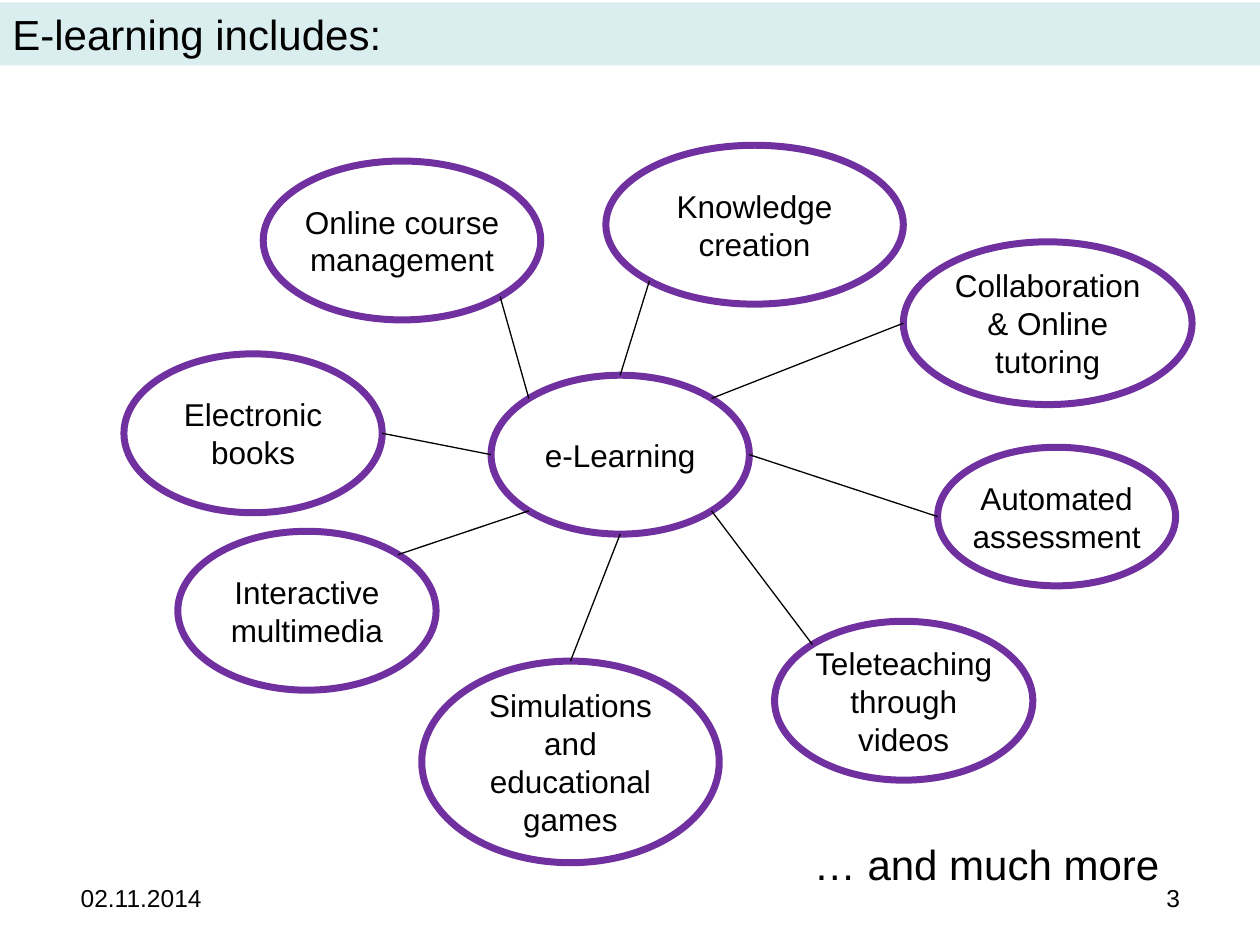
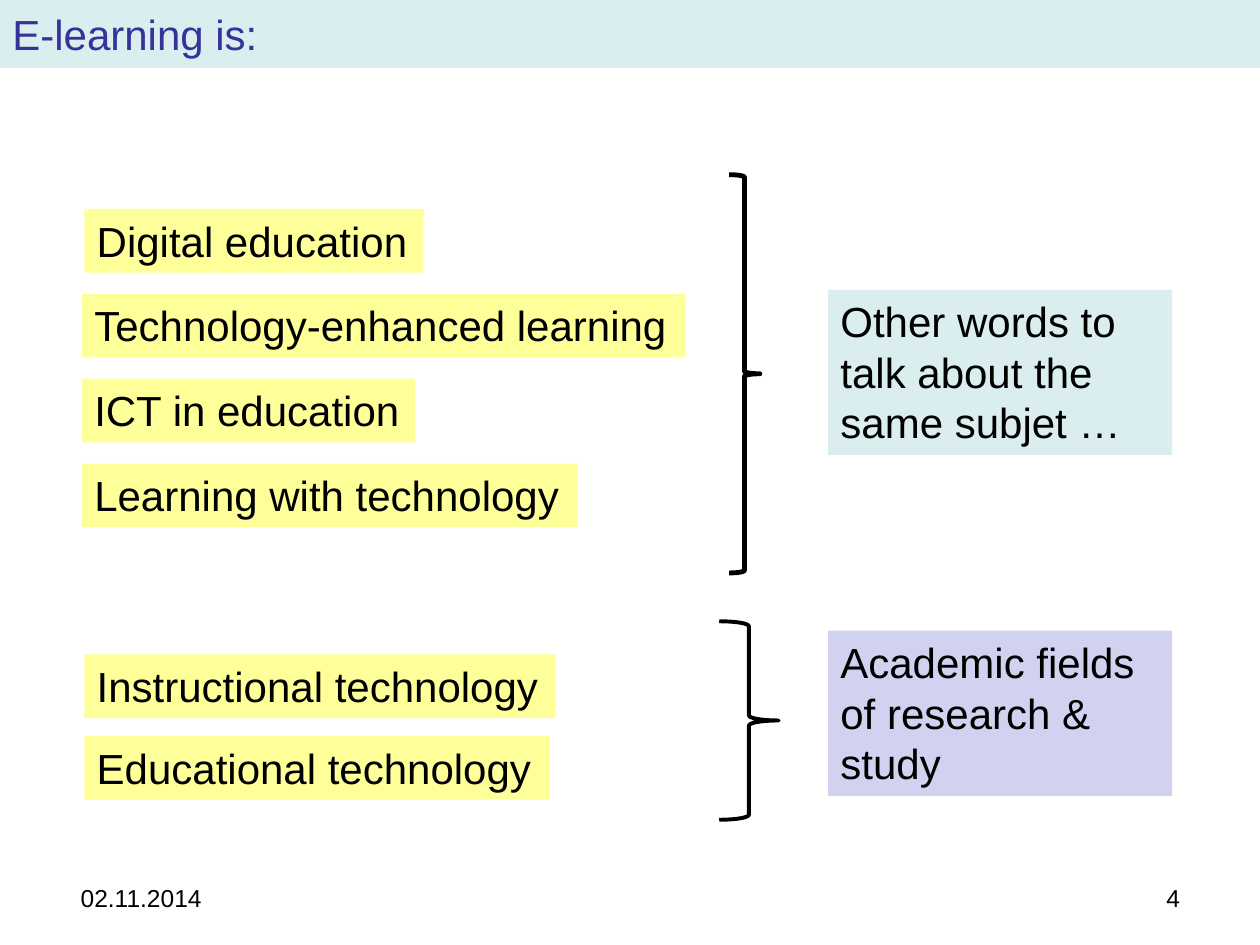
from lxml import etree
from pptx import Presentation
from pptx.dml.color import RGBColor
from pptx.enum.shapes import MSO_CONNECTOR, MSO_SHAPE
from pptx.enum.text import MSO_ANCHOR, PP_ALIGN
from pptx.oxml.ns import qn
from pptx.util import Pt

RECT, OVAL, BRACE = MSO_SHAPE.RECTANGLE, MSO_SHAPE.OVAL, MSO_SHAPE.RIGHT_BRACE
STRAIGHT = MSO_CONNECTOR.STRAIGHT
TOP, MIDDLE = MSO_ANCHOR.TOP, MSO_ANCHOR.MIDDLE
LEFT, CENTER, RIGHT = PP_ALIGN.LEFT, PP_ALIGN.CENTER, PP_ALIGN.RIGHT

FONT = "Arial"
COLORS = {
    "text": "000000",
    "title": "333399",
    "band": "DAEDEF",
    "bubble": "7030A0",
    "term": "FFFF99",
    "field": "D1D1F0",
}
DIAGONAL = 0.7071


def add_box(slide, kind, box, text="", size=24, color="text", fill=None, line=None,
            weight=1, align=LEFT, anchor=TOP, wrap=True):
    shape = slide.shapes.add_shape(kind, *[Pt(v) for v in box])
    shape.shadow.inherit = False
    if fill:
        shape.fill.solid()
        shape.fill.fore_color.rgb = RGBColor.from_string(COLORS[fill])
    else:
        shape.fill.background()
    if line:
        shape.line.color.rgb = RGBColor.from_string(COLORS[line])
        shape.line.width = Pt(weight)
    else:
        shape.line.fill.background()
    frame = shape.text_frame
    frame.word_wrap = wrap
    frame.vertical_anchor = anchor
    if text:
        frame.text = text
        paragraph = frame.paragraphs[0]
        paragraph.alignment = align
        font = paragraph.runs[0].font
        font.name, font.size = FONT, Pt(size)
        font.color.rgb = RGBColor.from_string(COLORS[color])
    return shape


def oval_site(box, direction):
    left, top, width, height = box
    dx, dy = direction
    reach = DIAGONAL if dx and dy else 1
    return (Pt(left + width / 2 * (1 + dx * reach)),
            Pt(top + height / 2 * (1 + dy * reach)))


prs = Presentation()
prs.slide_width, prs.slide_height = Pt(720), Pt(540)

slides = []
for number, title, title_color, band_top, band_height in [
    (3, "E-learning includes:", "text", 1.4, 36),
    (4, "E-learning is:", "title", 0, 39),
]:
    slide = prs.slides.add_slide(prs.slide_layouts[6])
    slides.append(slide)
    add_box(slide, RECT, (0, band_top, 720, band_height), title, color=title_color,
            fill="band", anchor=MIDDLE)
    for left, footer, align in [(39, "02.11.2014", LEFT), (513.4, str(number), RIGHT)]:
        footer_box = slide.shapes.add_textbox(Pt(left), Pt(502.5), Pt(168), Pt(25))
        footer_box.text_frame.word_wrap = True
        footer_box.text_frame.text = footer
        paragraph = footer_box.text_frame.paragraphs[0]
        paragraph.alignment = align
        paragraph.line_spacing = 0.93
        paragraph.runs[0].font.name = FONT
        paragraph.runs[0].font.size = Pt(14)
        paragraph.runs[0].font.color.rgb = RGBColor.from_string(COLORS["text"])

includes_slide, terms_slide = slides

hub = (280.6, 214.4, 147.6, 90.8)
topics = [
    ("Online course management", (150.4, 92, 158.6, 90.8), (-1, -1), (1, 1)),
    ("Electronic books", (70.8, 202.2, 147.6, 90.8), (-1, 0), (1, 0)),
    ("Interactive multimedia", (101.6, 303.6, 147.6, 90.8), (-1, 1), (1, -1)),
    ("Simulations and educational games", (241, 377.8, 170, 115.2), (0, 1), (0, -1)),
    ("Teleteaching through videos", (442.6, 355, 147.6, 90.8), (1, 1), (-1, -1)),
    ("Automated assessment", (535.8, 255.6, 136, 79.2), (1, 0), (-1, 0)),
    ("Collaboration & Online tutoring", (516.2, 138.2, 165, 93), (1, -1), (-1, 0)),
    ("Knowledge creation", (346.2, 83, 170, 90.8), (0, -1), (-1, 1)),
]
bubbles = [("e-Learning", hub)] + [topic[:2] for topic in topics]
for text, box in bubbles:
    bubble = add_box(includes_slide, OVAL, box, text, size=18, line="bubble", weight=4,
                     align=CENTER, anchor=MIDDLE)
    frame = bubble.text_frame
    frame.margin_left = frame.margin_right = frame.margin_top = frame.margin_bottom = 0

for text, box, hub_side, topic_side in topics:
    spoke = includes_slide.shapes.add_connector(
        STRAIGHT, *oval_site(hub, hub_side), *oval_site(box, topic_side))
    spoke.line.color.rgb = RGBColor.from_string(COLORS["text"])
    spoke.line.width = Pt(0.75)
    etree.SubElement(spoke._element.spPr, qn("a:effectLst"))

add_box(includes_slide, RECT, (458, 475.4, 214, 36), "… and much more", wrap=False)

term_groups = [
    (119.4, 48.5, [
        ("Digital education", 48.2, 194),
        ("Technology-enhanced learning", 46.8, 345),
        ("ICT in education", 46.8, 190.6),
        ("Learning with technology", 46.8, 283.2),
    ]),
    (374, 46.6, [
        ("Instructional technology", 48.2, 269.2),
        ("Educational technology", 48.2, 265.8),
    ]),
]
for first_top, step, terms in term_groups:
    for row, (term, left, width) in enumerate(terms):
        add_box(terms_slide, RECT, (left, first_top + row * step, width, 36.4), term,
                fill="term", wrap=False)

for brace, weight, meaning_top, meaning, fill in [
    ((416.6, 99.8, 17.6, 227.6), 2.75, 165.6,
     "Other words to talk about the same subjet …", "band"),
    ((411, 355, 34, 113.4), 2.25, 360.4,
     "Academic fields of research & study", "field"),
]:
    add_box(terms_slide, BRACE, brace, line="text", weight=weight)
    add_box(terms_slide, RECT, (473.2, meaning_top, 196.6, 94.4), meaning, fill=fill)

prs.save("out.pptx")
